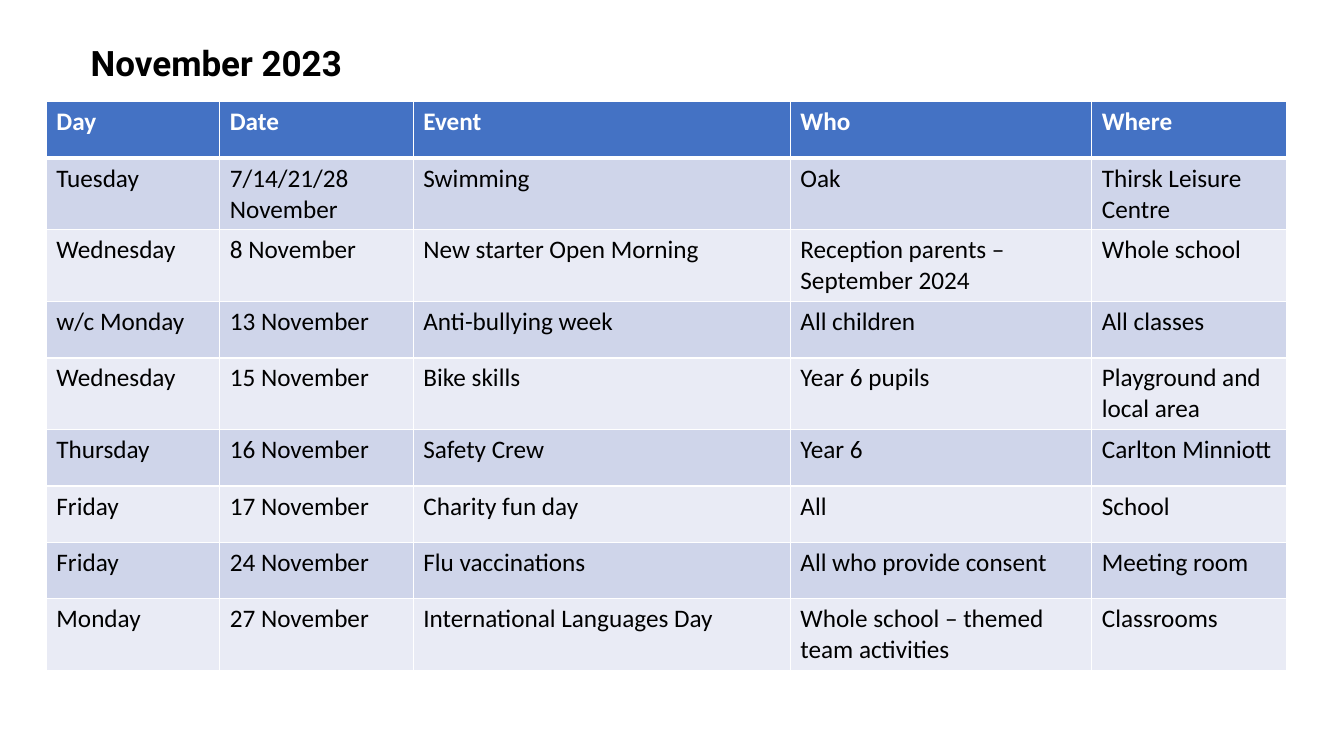
import dataclasses

import lxml.etree
import pptx
import pptx.dml.color
import pptx.enum.text
import pptx.oxml.ns
import pptx.util

Inches = pptx.util.Inches

COLOURS = {
    "white": "FFFFFF",
    "black": "000000",
    "heading": "4472C4",
    "odd": "CFD5EA",
    "even": "E9EBF5",
}
COLUMN_WIDTHS = (1.72, 1.92, 3.74, 2.99, 1.93)
ROW_HEIGHT = 0.56
HEADING_FORMAT = {"name": "Calibri", "size": pptx.util.Pt(18), "bold": True}
EVENT_FORMAT = {**HEADING_FORMAT, "bold": False}
TITLE_FORMAT = {"name": "Roboto", "size": pptx.util.Pt(25), "bold": True}


@dataclasses.dataclass
class Event:
    day: str
    date: str
    event: str
    who: str
    where: str


HEADINGS = Event("Day", "Date", "Event", "Who", "Where")
EVENTS = [
    Event("Tuesday", "7/14/21/28 November", "Swimming", "Oak", "Thirsk Leisure Centre"),
    Event("Wednesday", "8 November", "New starter Open Morning",
          "Reception parents – September 2024", "Whole school"),
    Event("w/c Monday", "13 November", "Anti-bullying week", "All children", "All classes"),
    Event("Wednesday", "15 November", "Bike skills", "Year 6 pupils",
          "Playground and local area"),
    Event("Thursday", "16 November", "Safety Crew", "Year 6", "Carlton Minniott"),
    Event("Friday", "17 November", "Charity fun day", "All", "School"),
    Event("Friday", "24 November", "Flu vaccinations", "All who provide consent",
          "Meeting room"),
    Event("Monday", "27 November", "International Languages Day",
          "Whole school – themed team activities", "Classrooms"),
]


def rgb(colour: str) -> pptx.dml.color.RGBColor:
    return pptx.dml.color.RGBColor.from_string(COLOURS[colour])


def format_font(font, settings: dict, colour: str) -> None:
    for attribute, value in settings.items():
        setattr(font, attribute, value)
    font.color.rgb = rgb(colour)


def add_borders(cell, top: float, bottom: float) -> None:
    properties = cell._tc.get_or_add_tcPr()
    qn = pptx.oxml.ns.qn
    for side, points in {"L": 1, "R": 1, "T": top, "B": bottom}.items():
        border = lxml.etree.SubElement(
            properties, qn(f"a:ln{side}"), w=str(pptx.util.Pt(points)))
        solid = lxml.etree.SubElement(border, qn("a:solidFill"))
        lxml.etree.SubElement(solid, qn("a:srgbClr"), val=COLOURS["white"])


def fill_row(table, index: int, event: Event) -> None:
    is_heading = index == 0
    background = "heading" if is_heading else ("even", "odd")[index % 2]
    for cell, wording in zip(table.rows[index].cells, dataclasses.astuple(event)):
        add_borders(cell, 3 if index == 1 else 1, 3 if is_heading else 1)
        cell.fill.solid()
        cell.fill.fore_color.rgb = rgb(background)
        cell.text = wording
        format_font(cell.text_frame.paragraphs[0].runs[0].font,
                    HEADING_FORMAT if is_heading else EVENT_FORMAT,
                    "white" if is_heading else "black")


def add_month(slide, wording: str) -> None:
    month = slide.shapes.title
    month.left, month.top = Inches(0.8), Inches(0.36)
    month.width, month.height = Inches(4.45), Inches(0.52)
    month.text = wording
    frame_format = {
        "auto_size": pptx.enum.text.MSO_AUTO_SIZE.NONE,
        "vertical_anchor": pptx.enum.text.MSO_ANCHOR.TOP,
        "word_wrap": True,
    }
    for attribute, value in frame_format.items():
        setattr(month.text_frame, attribute, value)
    paragraph = month.text_frame.paragraphs[0]
    paragraph.alignment = pptx.enum.text.PP_ALIGN.LEFT
    format_font(paragraph.runs[0].font, TITLE_FORMAT, "black")


def add_calendar(slide, rows: list[Event]) -> None:
    calendar = slide.shapes.add_table(
        len(rows), len(COLUMN_WIDTHS), Inches(0.46), Inches(1.01),
        Inches(sum(COLUMN_WIDTHS)), Inches(ROW_HEIGHT * len(rows))).table
    for column, width in zip(calendar.columns, COLUMN_WIDTHS):
        column.width = Inches(width)
    for index, event in enumerate(rows):
        calendar.rows[index].height = Inches(ROW_HEIGHT)
        fill_row(calendar, index, event)


def main() -> None:
    presentation = pptx.Presentation()
    presentation.slide_width = Inches(13.33)
    presentation.slide_height = Inches(7.5)
    slide = presentation.slides.add_slide(presentation.slide_layouts[5])
    add_month(slide, "November 2023")
    add_calendar(slide, [HEADINGS, *EVENTS])
    presentation.save("out.pptx")


if __name__ == "__main__":
    main()
